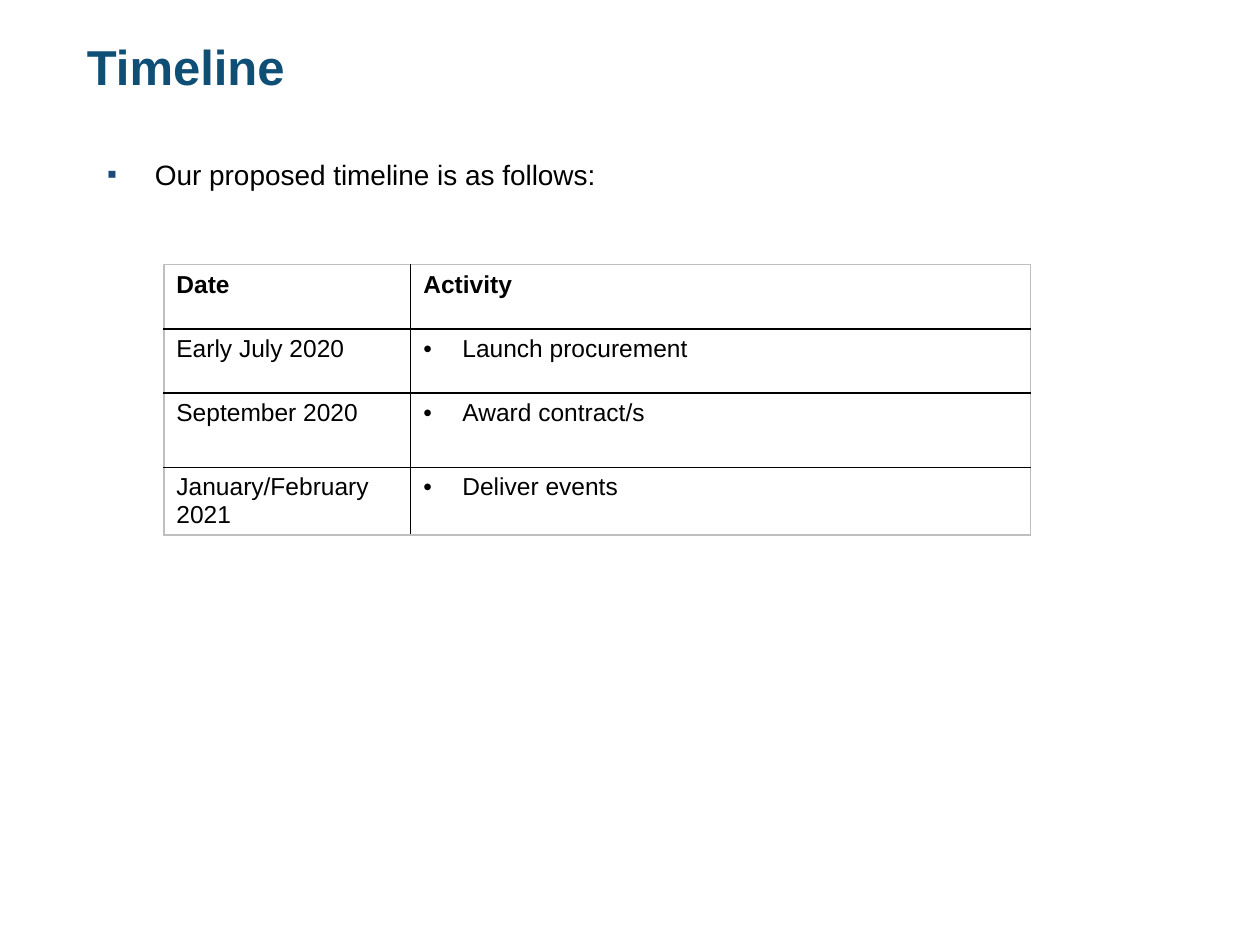
from dataclasses import dataclass

from lxml.etree import SubElement
from pptx import Presentation
from pptx.dml.color import RGBColor
from pptx.enum.text import MSO_ANCHOR, MSO_AUTO_SIZE, PP_ALIGN
from pptx.oxml.ns import qn
from pptx.util import Inches, Pt

WIDTH, HEIGHT = 10, 7.5
FONT = "Arial"
COLORS = {"title": "104F75", "text": "000000", "bullet": "1F497D",
          "grid": "000000", "frame": "BFBFBF"}
COL_WIDTHS = (1.96, 4.92)
ROW_HEIGHTS = (0.51, 0.51, 0.59, 0.51)


@dataclass
class Box:
    left: float
    top: float
    width: float
    height: float

    def emu(self) -> tuple:
        return (Inches(self.left * WIDTH), Inches(self.top * HEIGHT),
                Inches(self.width * WIDTH), Inches(self.height * HEIGHT))


@dataclass
class Step:
    date: str
    activity: str


STEPS = [
    Step("Date", "Activity"),
    Step("Early July 2020", "Launch procurement"),
    Step("September 2020", "Award contract/s"),
    Step("January/February 2021", "Deliver events"),
]


def style(p, size: int, color: str, bold: bool = False) -> None:
    p.alignment = PP_ALIGN.LEFT
    for r in p.runs:
        r.font.name, r.font.size, r.font.bold = FONT, Pt(size), bold
        r.font.color.rgb = RGBColor.from_string(COLORS[color])


def add_bullet(p, char: str, indent: float, color: str) -> None:
    pPr = p._p.get_or_add_pPr()
    pPr.set("marL", str(Inches(indent)))
    pPr.set("indent", str(-Inches(indent)))
    clr = SubElement(pPr, qn("a:buClr"))
    SubElement(clr, qn("a:srgbClr"), val=COLORS[color])
    SubElement(pPr, qn("a:buFont"), typeface=FONT)
    SubElement(pPr, qn("a:buChar"), char=char)


def fill_placeholder(sp, box: Box, text: str, anchor):
    sp.left, sp.top, sp.width, sp.height = box.emu()
    tf = sp.text_frame
    tf.text = text
    tf.word_wrap = True
    tf.auto_size = MSO_AUTO_SIZE.NONE
    tf.vertical_anchor = anchor
    p = tf.paragraphs[0]
    p.space_before = Pt(0)
    return p


def set_borders(cell, row: int, col: int) -> None:
    outer = {"L": col == 0, "R": col == len(COL_WIDTHS) - 1,
             "T": row == 0, "B": row == len(STEPS) - 1}
    tcPr = cell._tc.get_or_add_tcPr()
    for side, is_outer in outer.items():
        ln = SubElement(tcPr, qn(f"a:ln{side}"), w=str(Pt(1)))
        fill = SubElement(ln, qn("a:solidFill"))
        SubElement(fill, qn("a:srgbClr"), val=COLORS["frame" if is_outer else "grid"])


def add_timeline(s, box: Box) -> None:
    table = s.shapes.add_table(len(STEPS), len(COL_WIDTHS), *box.emu()).table
    table.first_row = table.horz_banding = False
    for column, width in zip(table.columns, COL_WIDTHS):
        column.width = Inches(width)
    for i, (step, height) in enumerate(zip(STEPS, ROW_HEIGHTS)):
        table.rows[i].height = Inches(height)
        for j, text in enumerate((step.date, step.activity)):
            cell = table.cell(i, j)
            cell.text = text
            p = cell.text_frame.paragraphs[0]
            if i and j:
                add_bullet(p, "•", 0.31, "text")
            style(p, 14, "text", bold=i == 0)
            set_borders(cell, i, j)
            cell.fill.background()


def main() -> None:
    prs = Presentation()
    prs.slide_width, prs.slide_height = Inches(WIDTH), Inches(HEIGHT)
    s = prs.slides.add_slide(prs.slide_layouts[1])

    p = fill_placeholder(s.shapes.title, Box(0.059, 0.017, 0.91, 0.105),
                         "Timeline", MSO_ANCHOR.MIDDLE)
    style(p, 28, "title", bold=True)

    p = fill_placeholder(s.placeholders[1], Box(0.075, 0.153, 0.85, 0.62),
                         "Our proposed timeline is as follows:", MSO_ANCHOR.TOP)
    add_bullet(p, "▪", 0.38, "bullet")
    p.line_spacing = 1.2
    p.space_after = Pt(6)
    style(p, 16, "text")

    add_timeline(s, Box(0.13, 0.28, sum(COL_WIDTHS) / WIDTH, sum(ROW_HEIGHTS) / HEIGHT))
    prs.save("out.pptx")


if __name__ == "__main__":
    main()
